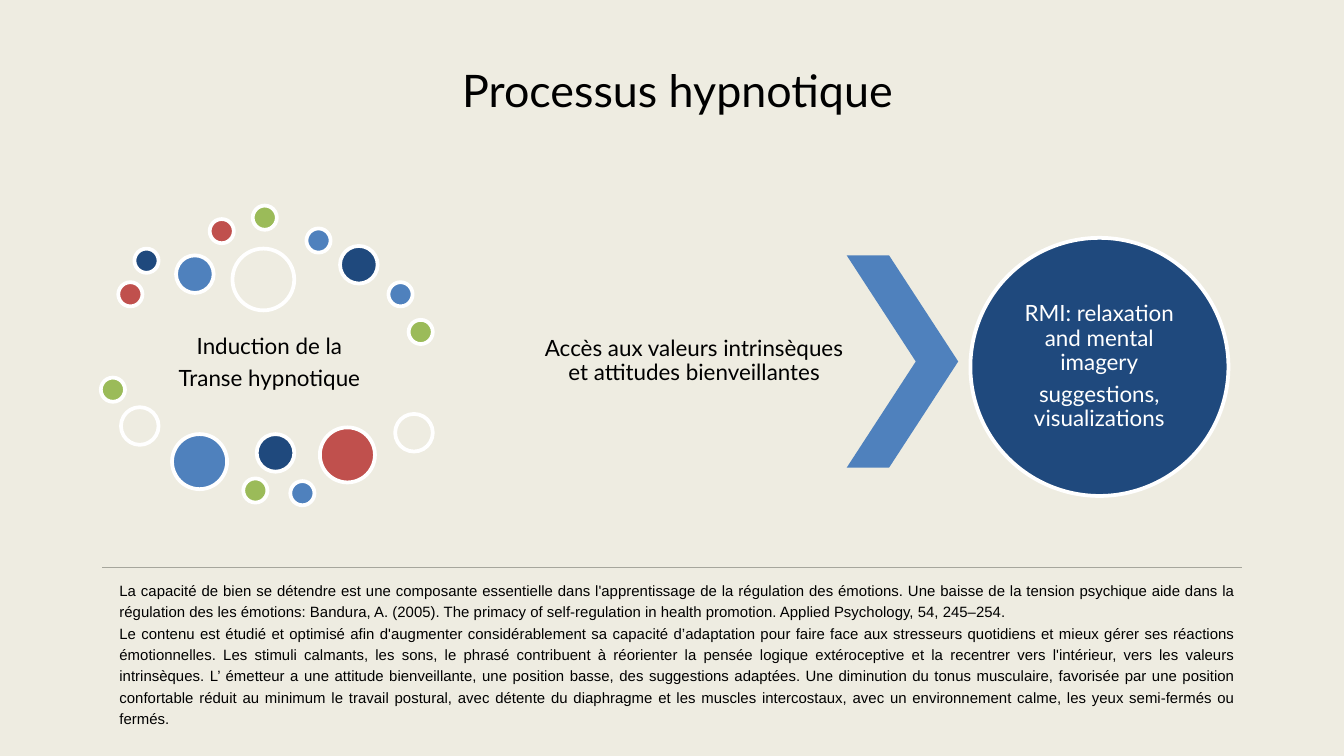
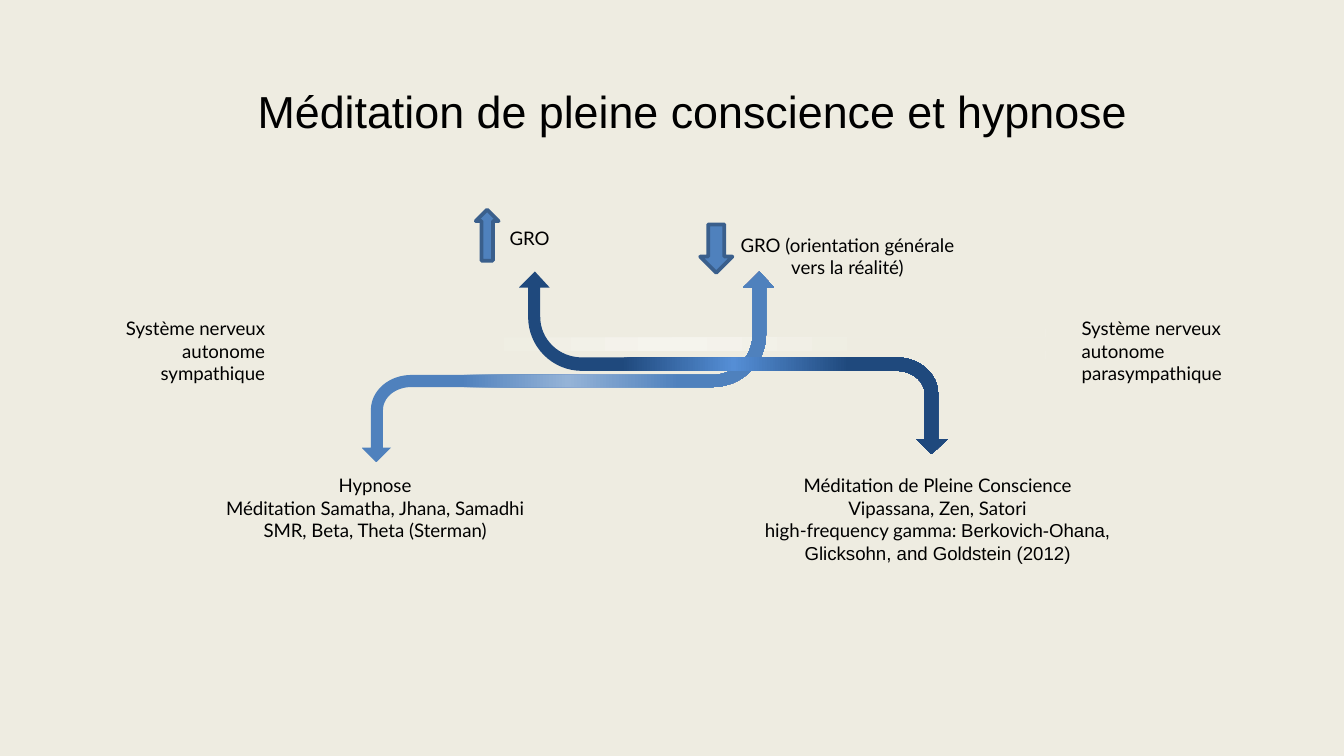
from copy import deepcopy
from math import cos, radians, sin

from lxml import etree
from pptx import Presentation
from pptx.dml.color import RGBColor
from pptx.enum.shapes import MSO_CONNECTOR, MSO_SHAPE
from pptx.enum.text import MSO_ANCHOR, MSO_AUTO_SIZE, PP_ALIGN
from pptx.oxml.ns import qn
from pptx.util import Inches, Pt

OVAL, CHEVRON = MSO_SHAPE.OVAL, MSO_SHAPE.CHEVRON
UP_ARROW, DOWN_ARROW = MSO_SHAPE.UP_ARROW, MSO_SHAPE.DOWN_ARROW
LEFT, CENTER, RIGHT, JUSTIFY = PP_ALIGN.LEFT, PP_ALIGN.CENTER, PP_ALIGN.RIGHT, PP_ALIGN.JUSTIFY
MIDDLE, GROW = MSO_ANCHOR.MIDDLE, MSO_AUTO_SIZE.SHAPE_TO_FIT_TEXT
STRAIGHT = MSO_CONNECTOR.STRAIGHT

CREAM, WHITE, BLACK = "EEECE1", "FFFFFF", "000000"
NAVY, BLUE, RED, GREEN = "1F497D", "4F81BD", "C0504D", "9BBB59"
ARROW_EDGE, RULE_GREY = "3A5F8C", "A6A69C"

TITLE = {"size": 24, "wrap": False, "inset": 0}
STEP = {"size": 12, "grow": False, "inset": 0.01, "anchor": MIDDLE,
        "paragraph": {"line_spacing": 0.9, "space_after": Pt(4.2)}}


def paint(shape, fill, line=None):
    shape.shadow.inherit = False
    if isinstance(fill, str):
        shape.fill.solid()
        shape.fill.fore_color.rgb = RGBColor.from_string(fill)
    else:
        shape.fill.gradient()
        shape.fill.gradient_angle = 0
        stop_list = shape._element.spPr.find(qn("a:gradFill")).find(qn("a:gsLst"))
        stop_list.append(deepcopy(stop_list[0]))
        for stop, position, color in zip(shape.fill.gradient_stops, (0.24, 0.5, 0.77), fill):
            stop.position = position
            stop.color.rgb = RGBColor.from_string(color)
    if line:
        shape.line.color.rgb = RGBColor.from_string(line)
        shape.line.width = Pt(2)
    else:
        shape.line.fill.background()


def write(slide, box, paragraphs, size=10, font="Lato", color=BLACK, align=CENTER,
          wrap=True, grow=True, inset=None, anchor=None, paragraph=None):
    frame = slide.shapes.add_textbox(*map(Inches, box)).text_frame
    layout = {"word_wrap": wrap, "vertical_anchor": anchor}
    if grow:
        layout["auto_size"] = GROW
    if inset is not None:
        for side in ("left", "right", "top", "bottom"):
            layout["margin_" + side] = Inches(inset)
    for name, value in layout.items():
        setattr(frame, name, value)
    for index, content in enumerate(paragraphs):
        para = frame.add_paragraph() if index else frame.paragraphs[0]
        for name, value in {"alignment": align, **(paragraph or {})}.items():
            setattr(para, name, value)
        for text, face in [(content, font)] if isinstance(content, str) else content:
            run = para.add_run()
            run.text = text
            run.font.color.rgb = RGBColor.from_string(color)
            for name, value in {"size": Pt(size), "name": face}.items():
                setattr(run.font, name, value)


prs = Presentation()
prs.slide_width = Inches(10)
prs.slide_height = prs.slide_width * 9 // 16
process, comparison = [prs.slides.add_slide(prs.slide_layouts[6]) for _ in range(2)]
for slide in (process, comparison):
    slide.background.fill.solid()
    slide.background.fill.fore_color.rgb = RGBColor.from_string(CREAM)

write(process, (3.38, 0.47, 3.32, 0.4), ["Processus hypnotique"], **TITLE)
write(process, (0.88, 2.33, 2.25, 0.74), ["Induction de la", "Transe hypnotique"], **STEP)

bubbles = [
    (0.88, 2.1, 0.18, RED), (1, 1.85, 0.18, NAVY), (1.31, 1.9, 0.28, BLUE),
    (1.56, 1.63, 0.18, RED), (1.88, 1.53, 0.18, GREEN), (2.28, 1.7, 0.18, BLUE),
    (2.53, 1.83, 0.28, NAVY), (2.89, 2.1, 0.18, BLUE), (3.04, 2.38, 0.18, GREEN),
    (1.73, 1.85, 0.46, CREAM), (0.75, 2.81, 0.18, GREEN), (0.9, 3.03, 0.28, CREAM),
    (1.28, 3.23, 0.41, BLUE), (1.81, 3.56, 0.18, GREEN), (1.91, 3.23, 0.28, NAVY),
    (2.16, 3.58, 0.18, BLUE), (2.38, 3.18, 0.41, RED), (2.94, 3.08, 0.28, CREAM),
    (7.22, 1.77, 1.92, NAVY),
]
for left, top, diameter, color in bubbles:
    bubble = process.shapes.add_shape(OVAL, *map(Inches, (left, top, diameter, diameter)))
    paint(bubble, color, WHITE)

write(process, (4.04, 1.9, 2.25, 1.58),
      ["Accès aux valeurs intrinsèques et attitudes bienveillantes"], **STEP)
next_step = process.shapes.add_shape(CHEVRON, *map(Inches, (6.3, 1.9, 0.83, 1.58)))
next_step.adjustments[0] = 0.62
paint(next_step, BLUE)
write(process, (7.5, 2.05, 1.36, 1.36),
      ["RMI: relaxation and mental imagery", "suggestions, visualizations"],
      color=WHITE, **STEP)

write(process, (0.79, 4.25, 8.51, 1.23), [
    "La capacité de bien se détendre est une composante essentielle dans l'apprentissage de la "
    "régulation des émotions. Une baisse de la tension psychique aide dans la régulation des les "
    "émotions: Bandura, A. (2005). The primacy of self-regulation in health promotion. Applied "
    "Psychology, 54, 245–254.",
    "Le contenu est étudié et optimisé afin d'augmenter considérablement sa capacité d’adaptation "
    "pour faire face aux stresseurs quotidiens et mieux gérer ses réactions émotionnelles. Les "
    "stimuli calmants, les sons, le phrasé contribuent à réorienter la pensée logique extéroceptive "
    "et la recentrer vers l'intérieur, vers les valeurs intrinsèques. L’ émetteur a une attitude "
    "bienveillante, une position basse, des suggestions adaptées. Une diminution du tonus "
    "musculaire, favorisée par une position confortable réduit au minimum le travail postural, avec "
    "détente du diaphragme et les muscles intercostaux, avec un environnement calme, les yeux "
    "semi-fermés ou fermés.",
], size=8, font="Arial", align=JUSTIFY, paragraph={"line_spacing": 1.2})
rule = process.shapes.add_connector(STRAIGHT, *map(Inches, (0.76, 4.22, 9.24, 4.22)))
rule.line.color.rgb = RGBColor.from_string(RULE_GREY)
rule.line.width = Pt(0.25)
etree.SubElement(rule._element.spPr, qn("a:effectLst"))

write(comparison, (1.88, 0.62, 6.54, 0.4), ["Méditation de pleine conscience et hypnose"],
      font="Arial", **TITLE)

axis = [(7.89, 2.56), (7.78, 2.45), (7.78, 2.51), (2.22, 2.51), (2.22, 2.45), (2.11, 2.56),
        (2.22, 2.67), (2.22, 2.61), (7.78, 2.61), (7.78, 2.67)]
hypnosis = [(5.76, 2.14), (5.65, 2.02), (5.53, 2.14), (5.6, 2.14),
            (5.3, 2.49, 0.3, 0.3, 0, 90), (3.06, 3.05, 0.3, 0.26, 270, 180),
            (2.76, 3.33), (2.69, 3.33), (2.8, 3.44), (2.91, 3.33), (2.85, 3.33),
            (3.06, 3.05, 0.21, 0.17, 180, 270), (5.3, 2.49, 0.4, 0.39, 90, 0), (5.7, 2.14)]
mindfulness = [(6.98, 3.27), (6.67, 2.93, 0.31, 0.27, 0, -90), (4.33, 2.36, 0.31, 0.3, 90, 180),
               (4.02, 2.14), (4.09, 2.14), (3.98, 2.02), (3.86, 2.14), (3.93, 2.14),
               (4.33, 2.36, 0.4, 0.4, 180, 90), (6.67, 2.93, 0.21, 0.17, -90, 0),
               (6.88, 3.27), (6.82, 3.27), (6.93, 3.38), (7.05, 3.27)]
BEND_STEPS = 16
for outline, shades in [(axis, (CREAM, "F5F4ED", CREAM)),
                        (hypnosis, (BLUE, "95B3D7", BLUE)),
                        (mindfulness, (NAVY, "558ED5", NAVY))]:
    points = []
    for x, y, *bend in outline:
        if not bend:
            points.append((Inches(x), Inches(y)))
            continue
        radius_x, radius_y, start, end = bend
        for step in range(BEND_STEPS + 1):
            angle = radians(start + (end - start) * step / BEND_STEPS)
            points.append((Inches(x + radius_x * cos(angle)), Inches(y + radius_y * sin(angle))))
    builder = comparison.shapes.build_freeform(*points[0])
    builder.add_line_segments(points[1:], close=True)
    paint(builder.convert_to_shape(), shades)

labels = [
    ((0.73, 2.31, 1.34, 0.61), RIGHT, ["Système nerveux autonome sympathique"]),
    ((7.95, 2.31, 1.34, 0.61), LEFT, ["Système nerveux autonome parasympathique"]),
    ((1.5, 3.48, 2.58, 0.61), CENTER,
     ["Hypnose", "Méditation Samatha, Jhana, Samadhi", "SMR, Beta, Theta (Sterman)"]),
    ((5.39, 1.69, 1.83, 0.44), CENTER, ["GRO (orientation générale vers la réalité)"]),
    ((5.58, 3.48, 2.79, 0.77), CENTER,
     ["Méditation de Pleine Conscience", "Vipassana, Zen, Satori",
      [("high-frequency gamma: ", "Lato"),
       ("Berkovich-Ohana, Glicksohn, and Goldstein (2012)", "Arial")]]),
    ((3.33, 1.64, 1.22, 0.27), CENTER, ["GRO"]),
]
for box, align, paragraphs in labels:
    write(comparison, box, paragraphs, align=align)

for direction, box in [(DOWN_ARROW, (5.21, 1.67, 0.24, 0.36)), (UP_ARROW, (3.54, 1.56, 0.17, 0.38))]:
    paint(comparison.shapes.add_shape(direction, *map(Inches, box)), BLUE, ARROW_EDGE)

prs.save("out.pptx")
